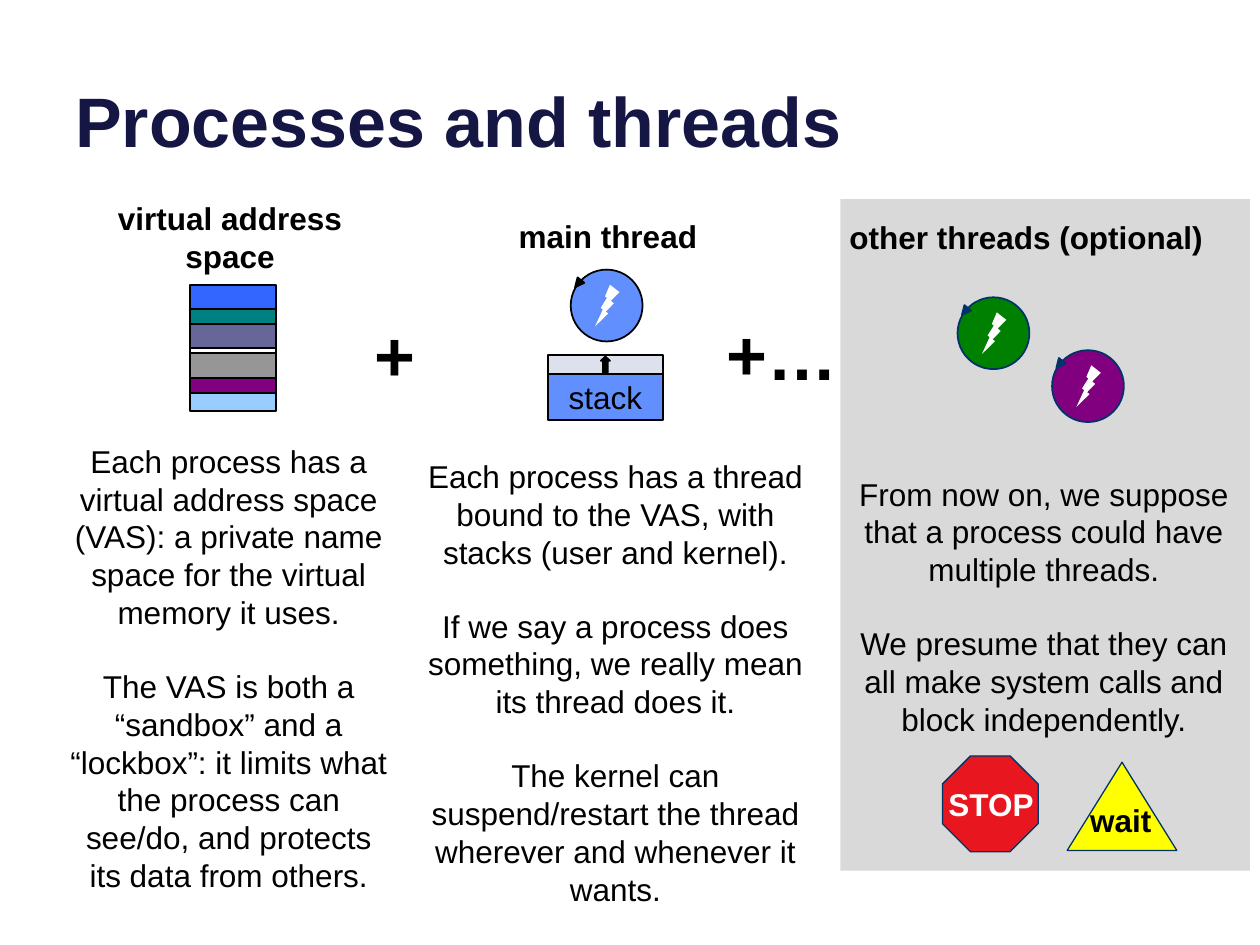
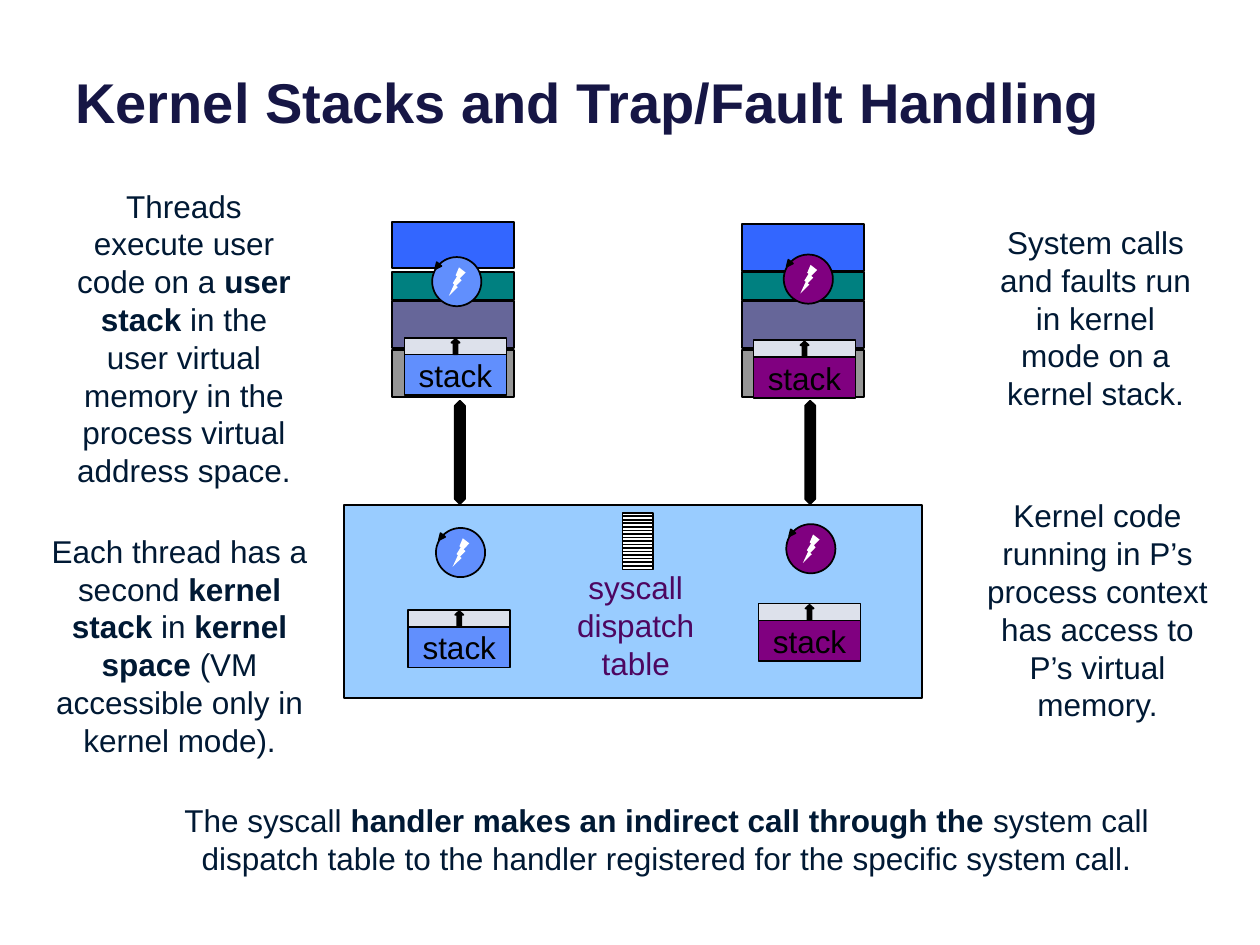
"""Build two slides on processes, threads and kernel stacks."""
import pptx
import pptx.util
import pptx.dml.color
import pptx.enum.shapes
import pptx.enum.text

Inches = pptx.util.Inches
kinds = pptx.enum.shapes.MSO_SHAPE
aligns = pptx.enum.text.PP_ALIGN
anchors = pptx.enum.text.MSO_ANCHOR
colour = pptx.dml.color.RGBColor.from_string

BLACK, WHITE, TITLE, BODY = "000000", "FFFFFF", "161645", "001934"
NAVY, BLUE, PURPLE, SKY = "003367", "618FFD", "800080", "99CCFF"
ROYAL, TEAL, SLATE, GREY = "3366FF", "008080", "666699", "969696"
PALE, PANEL, GREEN, SYSCALL = "DDE1EB", "D9D9D9", "008000", "4D0660"
LINE_HEIGHT = 20.7


def draw(slide, kind, box, fill, line=BLACK, width=1, adjust=()):
    """Add a filled shape, outlined unless line is None."""
    shape = slide.shapes.add_shape(kind, *map(Inches, box))
    shape.shadow.inherit = False
    shape.fill.solid()
    shape.fill.fore_color.rgb = colour(fill)
    if line:
        shape.line.color.rgb = colour(line)
        shape.line.width = pptx.util.Pt(width)
    else:
        shape.line.fill.background()
    for index, value in enumerate(adjust):
        shape.adjustments[index] = value
    return shape


def write(shape, text, size=18, color=BLACK, bold=False, wrap=True,
          align=aligns.CENTER, anchor=anchors.MIDDLE):
    """Fill a shape with text; ** switches bold, a newline starts a spaced paragraph."""
    frame = shape.text_frame
    frame.word_wrap = wrap
    frame.vertical_anchor = anchor
    for number, line in enumerate(text.split("\n")):
        paragraph = frame.add_paragraph() if number else frame.paragraphs[0]
        paragraph.alignment = align
        paragraph.space_before = pptx.util.Pt(LINE_HEIGHT if number else 0)
        for part, piece in enumerate(line.split("**")):
            run = paragraph.add_run()
            run.text = piece
            run.font.name = "Arial"
            run.font.size = pptx.util.Pt(size)
            run.font.bold = bold or part % 2 == 1
            run.font.color.rgb = colour(color)


deck = pptx.Presentation()
deck.slide_width, deck.slide_height = Inches(10), Inches(7.5)
processes = deck.slides.add_slide(deck.slide_layouts[6])
kernel = deck.slides.add_slide(deck.slide_layouts[6])

for slide, title, top, size in (
    (processes, "Processes and threads", -0.37, 40),
    (kernel, "Kernel Stacks and Trap/Fault Handling", -0.58, 32),
):
    heading = slide.shapes.add_textbox(*map(Inches, (0.5, top, 9, 1.7)))
    write(heading, title, size=size, color=TITLE, bold=True,
          align=aligns.LEFT, anchor=anchors.BOTTOM)

draw(processes, kinds.RECTANGLE, (6.67, 1.58, 3.25, 5.33), PANEL, line=None)

segment_top = 2.26
for fill, height in ((ROYAL, 0.19), (TEAL, 0.12), (SLATE, 0.19), (WHITE, 0.04),
                     (GREY, 0.2), (PURPLE, 0.12), (SKY, 0.14)):
    draw(processes, kinds.FLOWCHART_PROCESS, (1.51, segment_top, 0.68, height), fill)
    segment_top += height

for label, box, size, wrap in (
    ("+", (2.87, 2.42, 0.52, 0.77), 40, False),
    ("+…", (5.66, 2.41, 1.09, 0.77), 40, False),
    ("virtual address space", (0.65, 1.68, 2.35, 0.4), 18, True),
    ("main thread", (4.01, 1.67, 1.63, 0.4), 18, False),
    ("other threads (optional)", (6.63, 1.68, 3.03, 0.4), 18, False),
):
    write(processes.shapes.add_textbox(*map(Inches, box)), label,
          size=size, bold=True, wrap=wrap)

for explanation, box in (
    ("Each process has a thread bound to the VAS, with stacks (user and kernel).\n"
     "If we say a process does something, we really mean its thread does it.\n"
     "The kernel can suspend/restart the thread wherever and whenever it wants.",
     (3.27, 3.7, 3.23, 3.43)),
    ("Each process has a virtual address space (VAS): a private name space for "
     "the virtual memory it uses.\n"
     "The VAS is both a “sandbox” and a “lockbox”: it limits what the process can "
     "see/do, and protects its data from others.",
     (0.44, 3.43, 2.75, 3.74)),
    ("From now on, we suppose that a process could have multiple threads.\n"
     "We presume that they can all make system calls and block independently.",
     (6.67, 3.7, 3.23, 2.22)),
):
    write(processes.shapes.add_textbox(*map(Inches, box)), explanation)

for sign, kind, box, fill, label_box, color, adjust in (
    ("STOP", kinds.OCTAGON, (7.48, 6, 0.76, 0.76), "E8161F",
     (7.42, 6.18, 0.89, 0.4), WHITE, (0.293,)),
    ("wait", kinds.ISOSCELES_TRIANGLE, (8.47, 6.05, 0.87, 0.7), "FFFF00",
     (8.55, 6.31, 0.69, 0.4), BLACK, ()),
):
    draw(processes, kind, box, fill, line=NAVY, width=0.75, adjust=adjust)
    write(processes.shapes.add_textbox(*map(Inches, label_box)), sign,
          color=color, bold=True, wrap=False)

draw(kernel, kinds.FLOWCHART_PROCESS, (2.73, 4.01, 4.59, 1.53), SKY)
for space_left, space_top, trap_left in ((3.11, 1.76, 3.61), (5.89, 1.78, 6.39)):
    for fill, top, height in ((ROYAL, space_top, 0.37), (TEAL, 2.16, 0.22),
                              (SLATE, 2.39, 0.37), (GREY, 2.78, 0.37)):
        draw(kernel, kinds.FLOWCHART_PROCESS, (space_left, top, 0.97, height), fill)
    draw(kernel, kinds.UP_DOWN_ARROW, (trap_left, 3.18, 0.08, 0.82), BLACK,
         adjust=(0.5, 2))

for entry in range(16):
    draw(kernel, kinds.FLOWCHART_PROCESS, (4.94, 4.07 + entry * 0.028, 0.24, 0.03), WHITE)

for slide, left, top, size, fill, ink in (
    (processes, 4.53, 2.14, 0.57, BLUE, BLACK),
    (processes, 7.6, 2.36, 0.57, GREEN, NAVY),
    (processes, 8.35, 2.78, 0.57, PURPLE, NAVY),
    (kernel, 6.24, 4.16, 0.39, PURPLE, BLACK),
    (kernel, 3.46, 4.19, 0.39, BLUE, BLACK),
    (kernel, 3.43, 2.04, 0.39, BLUE, BLACK),
    (kernel, 6.22, 2.02, 0.39, PURPLE, BLACK),
):
    draw(slide, kinds.OVAL, (left, top, size, size), fill, line=ink)
    bolt = draw(slide, kinds.LIGHTNING_BOLT,
                (left + 0.34 * size, top + 0.21 * size, 0.34 * size, 0.58 * size),
                WHITE, line=None)
    bolt._element.spPr.xfrm.set("flipH", "1")
    loop_head = draw(slide, kinds.ISOSCELES_TRIANGLE,
                     (left + 0.04 * size, top + 0.13 * size, 0.12 * size, 0.13 * size),
                     ink, line=ink)
    loop_head.rotation = 219

for slide, left, top, width, fill in (
    (processes, 4.35, 2.82, 0.91, BLUE),
    (kernel, 3.21, 2.68, 0.81, BLUE),
    (kernel, 3.24, 4.84, 0.81, BLUE),
    (kernel, 5.98, 2.7, 0.81, PURPLE),
    (kernel, 6.02, 4.79, 0.81, PURPLE),
):
    free = 0.165 * width
    draw(slide, kinds.FLOWCHART_PROCESS, (left, top, width, free), PALE)
    used = draw(slide, kinds.FLOWCHART_PROCESS,
                (left, top + free, width, 0.4 * width), fill)
    write(used, "stack", wrap=False)
    draw(slide, kinds.UP_ARROW,
         (left + 0.46 * width, top + 0.01, 0.08 * width, 0.15 * width), BLACK,
         adjust=(0.5, 0.458))

for note, box, color in (
    ("Threads execute user code on a **user stack** in the user virtual memory in "
     "the process virtual address space.", (0.49, 1.42, 1.94, 2.52), BODY),
    ("Each thread has a second **kernel stack** in **kernel space **(VM accessible "
     "only in kernel mode).", (0.2, 4.16, 2.45, 1.92), BODY),
    ("System calls and faults run in kernel mode on a kernel stack.",
     (7.83, 1.71, 1.73, 1.62), BODY),
    ("syscall dispatch table", (4.37, 4.46, 1.35, 1), SYSCALL),
    ("Kernel code running in P’s process context has access to P’s virtual memory.",
     (7.7, 3.88, 2.02, 1.92), BODY),
    ("The syscall **handler makes an indirect call through the **system call "
     "dispatch table to the handler registered for the specific system call.",
     (1.25, 6.3, 8.08, 0.71), BODY),
):
    write(kernel.shapes.add_textbox(*map(Inches, box)), note, color=color)

deck.save("out.pptx")
